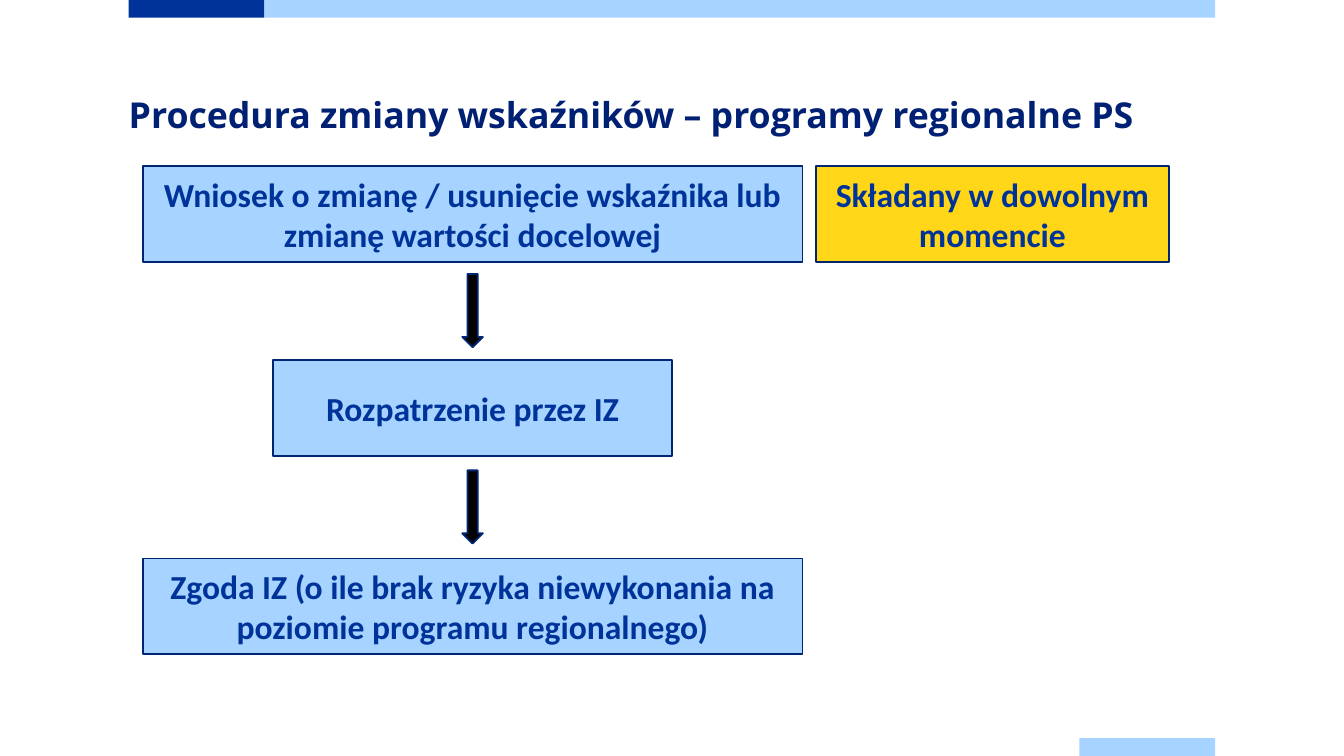
from pptx import Presentation
from pptx.dml.color import RGBColor
from pptx.enum import shapes, text
from pptx.util import Pt

NAVY = RGBColor(0x00, 0x20, 0x73)
OUTLINE = RGBColor(0x00, 0x26, 0x71)
BLUE = RGBColor(0x00, 0x33, 0x99)
LIGHT_BLUE = RGBColor(0xA6, 0xD3, 0xFF)
YELLOW = RGBColor(0xFF, 0xD6, 0x18)
BLACK = RGBColor(0x00, 0x00, 0x00)

deck = Presentation()
deck.slide_width, deck.slide_height = Pt(720), Pt(405)
page = deck.slides.add_slide(deck.slide_layouts[6])


def add_filled(kind, left, top, width, height, fill, outlined=True):
    shape = page.shapes.add_shape(kind, Pt(left), Pt(top), Pt(width), Pt(height))
    shape.shadow.inherit = False
    shape.fill.solid()
    shape.fill.fore_color.rgb = fill
    if outlined:
        shape.line.color.rgb = OUTLINE
        shape.line.width = Pt(1)
    else:
        shape.line.fill.background()
    return shape


def style_text(para, font_name, size, color):
    span = para.runs[0]
    span.font.name = font_name
    span.font.size = Pt(size)
    span.font.bold = True
    span.font.color.rgb = color


# Decorative bars at the top and bottom edges
RECT = shapes.MSO_SHAPE.RECTANGLE
BAR_HEIGHT = 9.5
for left, top, width, fill in [
    (69, 0, 72.75, BLUE),
    (141.75, 0, 509.25, LIGHT_BLUE),
    (578.25, 405 - BAR_HEIGHT, 72.75, LIGHT_BLUE),
]:
    add_filled(RECT, left, top, width, BAR_HEIGHT, fill, outlined=False)

# Title
title = page.shapes.add_textbox(Pt(69), Pt(48.4), Pt(582), Pt(57.6))
frame = title.text_frame
frame.word_wrap = True
frame.margin_left = frame.margin_right = frame.margin_top = frame.margin_bottom = 0
frame.text = "Procedura zmiany wskaźników – programy regionalne PS"
frame.paragraphs[0].line_spacing = Pt(24.5)
style_text(frame.paragraphs[0], "Open Sans", 19.1, NAVY)

# Procedure steps, centred on one axis, with a note beside the first
AXIS = 253.2
BOX_HEIGHT = 51.2
for center, top, width, fill, wording in [
    (AXIS, 89, 353.5, LIGHT_BLUE,
     "Wniosek o zmianę / usunięcie wskaźnika lub zmianę wartości docelowej"),
    (531.7, 89, 189.3, YELLOW, "Składany w dowolnym momencie"),
    (AXIS, 193, 214, LIGHT_BLUE, "Rozpatrzenie przez IZ"),
    (AXIS, 299.2, 353.5, LIGHT_BLUE,
     "Zgoda IZ (o ile brak ryzyka niewykonania na poziomie programu regionalnego)"),
]:
    box = add_filled(RECT, center - width / 2, top, width, BOX_HEIGHT, fill)
    frame = box.text_frame
    frame.word_wrap = True
    frame.vertical_anchor = text.MSO_ANCHOR.MIDDLE
    frame.text = wording
    para = frame.paragraphs[0]
    para.alignment = text.PP_ALIGN.CENTER
    style_text(para, "Calibri", 18, BLUE)

# Arrows between the steps
ARROW_WIDTH = 11
for top in (146.8, 252):
    add_filled(shapes.MSO_SHAPE.DOWN_ARROW, AXIS - ARROW_WIDTH / 2, top,
               ARROW_WIDTH, 39.2, BLACK)

deck.save("out.pptx")
